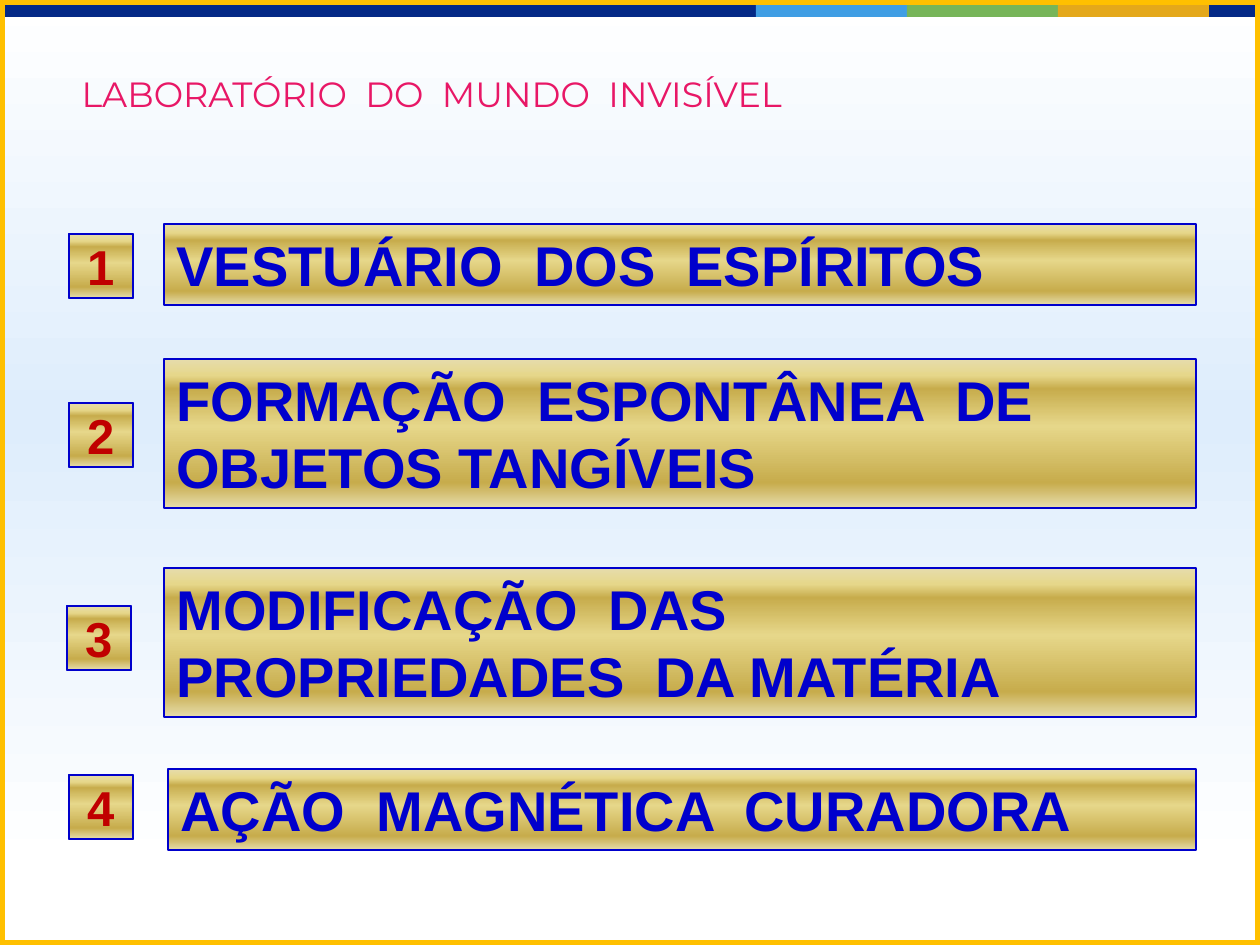
from lxml import etree
from pptx import Presentation
from pptx.dml.color import RGBColor
from pptx.enum.shapes import MSO_SHAPE
from pptx.enum.text import MSO_ANCHOR, PP_ALIGN
from pptx.oxml.ns import qn
from pptx.util import Pt

RECT, BEVEL = MSO_SHAPE.RECTANGLE, MSO_SHAPE.BEVEL
TOP, MIDDLE = MSO_ANCHOR.TOP, MSO_ANCHOR.MIDDLE
LEFT, CENTER = PP_ALIGN.LEFT, PP_ALIGN.CENTER
SCALE = 914400 / 126
WIDE, HIGH = 1260, 945

COLORS = {
    "navy": "042986", "sky": "3F9EE4", "green": "77B559", "amber": "E4A81B",
    "blue": "0000CC", "red": "C00000", "pink": "E81766", "frame": "FFC000",
    "white": "FFFFFF", "pale": "DEEDFC",
    "cream": "E6DCAC", "gold": "E6D78A", "bronze": "C7AC4C",
}
GOLD = [(0, "cream"), (11, "gold"), (20, "bronze"),
        (45, "gold"), (83, "bronze"), (100, "cream")]
HAZE = [(0, "white"), (48, "pale"), (100, "white")]

# text, bar box, number box left and top
TOPICS = [
    ("VESTUÁRIO  DOS  ESPÍRITOS", (164, 224, 1032, 81), (69, 234)),
    ("FORMAÇÃO  ESPONTÂNEA  DE  OBJETOS TANGÍVEIS",
     (164, 359, 1032, 149), (69, 403)),
    ("MODIFICAÇÃO  DAS  PROPRIEDADES  DA MATÉRIA",
     (164, 568, 1032, 149), (67, 606)),
    ("AÇÃO  MAGNÉTICA  CURADORA", (168, 769, 1028, 81), (69, 775)),
]


def px(value):
    return round(value * SCALE)


def rgb(name):
    return RGBColor.from_string(COLORS[name])


def blend(shape, stops):
    """Fill a shape from top to bottom with (percent, color) stops."""
    shape.fill.gradient()
    shape.fill.gradient_angle = 270
    group = shape._element.spPr.find(qn("a:gradFill")).find(qn("a:gsLst"))
    for old in list(group):
        group.remove(old)
    for spot, name in stops:
        stop = etree.SubElement(group, qn("a:gs"), pos=str(spot * 1000))
        etree.SubElement(stop, qn("a:srgbClr"), val=COLORS[name])


def block(slide, box, fill=None, line=None, width=1.5, kind=RECT):
    """Add a shape; fill is a color name, a list of stops or None."""
    shape = slide.shapes.add_shape(kind, *map(px, box))
    shape.shadow.inherit = False
    if fill is None:
        shape.fill.background()
    elif isinstance(fill, str):
        shape.fill.solid()
        shape.fill.fore_color.rgb = rgb(fill)
    else:
        blend(shape, fill)
    if line:
        shape.line.color.rgb = rgb(line)
        shape.line.width = Pt(width)
    else:
        shape.line.fill.background()
    return shape


def write(shape, text, size, color, font="Arial", bold=True,
          align=LEFT, anchor=TOP, wrap=True):
    frame = shape.text_frame
    frame.word_wrap = wrap
    frame.vertical_anchor = anchor
    para = frame.paragraphs[0]
    para.alignment = align
    run = para.add_run()
    run.text = text
    run.font.size = Pt(size)
    run.font.name = font
    run.font.bold = bold
    run.font.color.rgb = rgb(color)


def backdrop(slide, box):
    left, top, width, _ = box
    block(slide, (left, top, width, 867), HAZE)
    block(slide, (left, top, width, 17), "navy")
    for step, name in enumerate(("sky", "green", "amber")):
        block(slide, (left + 756 + 151 * step, top, 151, 17), name)
    block(slide, box, line="frame", width=6)


def heading(slide, box, text):
    title = slide.shapes.title
    title.left, title.top, title.width, title.height = map(px, box)
    write(title, text, 20, "pink", font="Montserrat", bold=False, wrap=False)


def topic(slide, box, spot, number, text):
    bar = block(slide, box, GOLD, "blue")
    write(bar, text, 32, "blue")
    badge = block(slide, (*spot, 64, 64), GOLD, "blue", kind=BEVEL)
    badge.adjustments[0] = 0
    write(badge, str(number), 28, "red", align=CENTER, anchor=MIDDLE)


def main():
    deck = Presentation()
    deck.slide_width, deck.slide_height = px(WIDE), px(HIGH)
    slide = deck.slides.add_slide(deck.slide_layouts[5])
    backdrop(slide, (0, 0, WIDE, HIGH))
    heading(slide, (69, 66, 1127, 89), "LABORATÓRIO  DO  MUNDO  INVISÍVEL")
    # The title placeholder comes first, so lift it above the backdrop.
    slide.shapes._spTree.append(slide.shapes.title._element)
    for number, (text, box, spot) in enumerate(TOPICS, 1):
        topic(slide, box, spot, number, text)
    deck.save("out.pptx")


if __name__ == "__main__":
    main()
